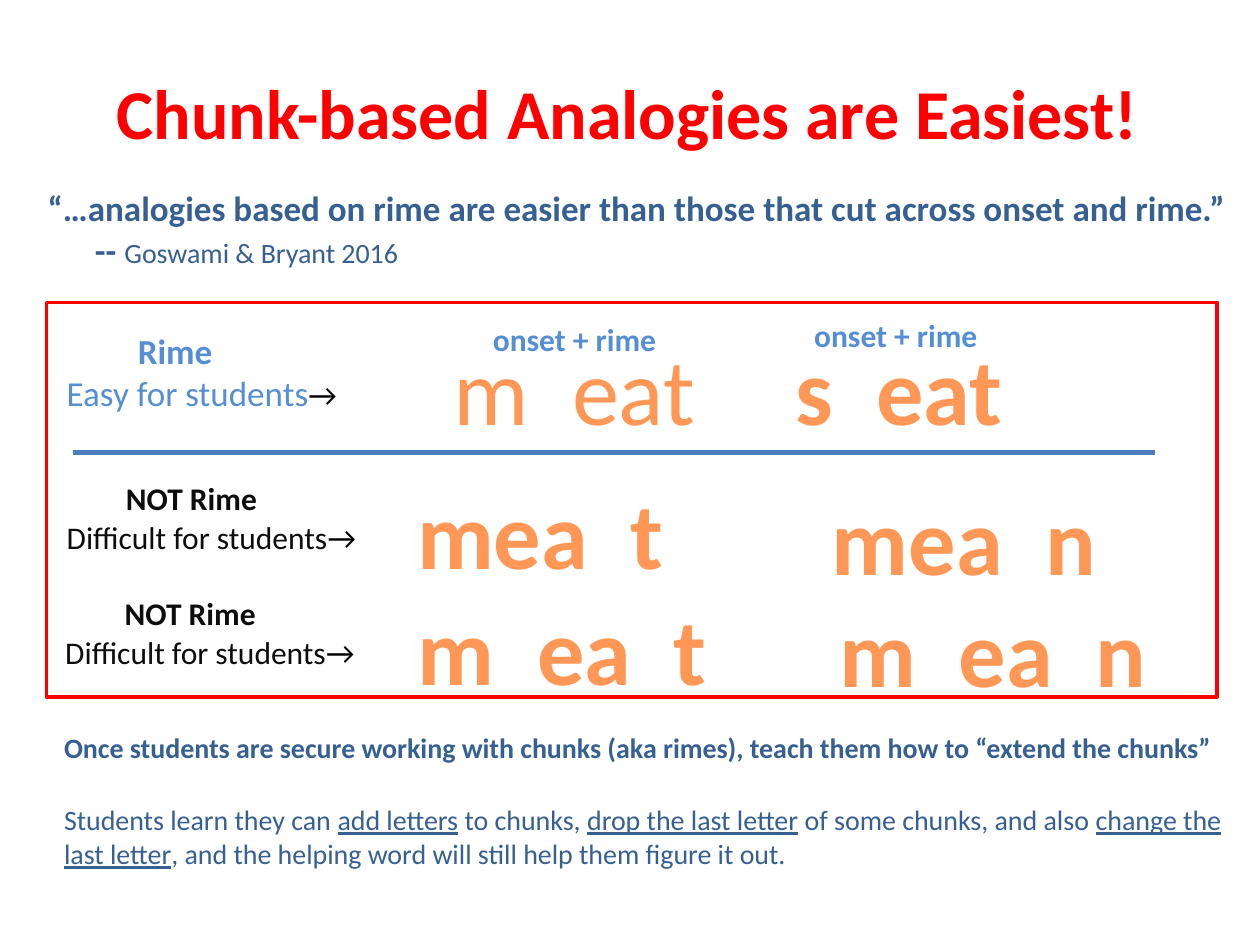
"""Build a slide on why chunk-based analogies are easiest for students."""
from lxml.etree import SubElement
from pptx import Presentation
from pptx.dml.color import RGBColor
from pptx.enum.shapes import MSO_CONNECTOR, MSO_SHAPE
from pptx.enum.text import MSO_AUTO_SIZE, PP_ALIGN
from pptx.oxml.ns import qn
from pptx.util import Pt

RED = RGBColor(0xFF, 0x00, 0x00)
NAVY = RGBColor(0x37, 0x60, 0x92)
SKY = RGBColor(0x55, 0x8E, 0xD5)
RULE_BLUE = RGBColor(0x4B, 0x7E, 0xBC)
ORANGE = RGBColor(0xFF, 0x98, 0x56)
INK = RGBColor(0x0D, 0x0D, 0x0D)
BLACK = RGBColor(0x00, 0x00, 0x00)


class SlideBuilder:
    """Holds the font and the current slide, and adds elements to it."""

    def __init__(self, slide, font_name="Calibri"):
        self.slide = slide
        self.font_name = font_name

    def format_run(self, run, size, color, bold=False, underline=False):
        font = run.font
        font.name = self.font_name
        font.size = Pt(size)
        font.bold = bold
        font.underline = underline
        font.color.rgb = color

    def text_frame(self, left, top, width, height, wrap=True):
        box = self.slide.shapes.add_textbox(Pt(left), Pt(top), Pt(width), Pt(height))
        frame = box.text_frame
        frame.word_wrap = wrap
        frame.auto_size = MSO_AUTO_SIZE.SHAPE_TO_FIT_TEXT
        return frame

    def centered(self, text, left, top, width, height, size, color, bold=True, wrap=True):
        frame = self.text_frame(left, top, width, height, wrap)
        frame.text = text
        paragraph = frame.paragraphs[0]
        paragraph.alignment = PP_ALIGN.CENTER
        self.format_run(paragraph.runs[0], size, color, bold)

    def word(self, text, left, top, width, bold=True):
        self.centered(text, left, top, width, 72.7, 54, ORANGE, bold, wrap=False)

    def paragraphs(self, left, top, width, height, *run_lists):
        frame = self.text_frame(left, top, width, height)
        for index, runs in enumerate(run_lists):
            paragraph = frame.add_paragraph() if index else frame.paragraphs[0]
            for text, *style in runs:
                run = paragraph.add_run()
                run.text = text
                self.format_run(run, *style)
        return frame.paragraphs

    def outline(self, left, top, width, height, color, weight):
        shape = self.slide.shapes.add_shape(
            MSO_SHAPE.RECTANGLE, Pt(left), Pt(top), Pt(width), Pt(height))
        shape.shadow.inherit = False
        shape.fill.background()
        shape.line.color.rgb = color
        shape.line.width = Pt(weight)

    def rule(self, left, right, top, color, weight):
        line = self.slide.shapes.add_connector(
            MSO_CONNECTOR.STRAIGHT, Pt(left), Pt(top), Pt(right), Pt(top))
        line.line.color.rgb = color
        line.line.width = Pt(weight)
        SubElement(line._element.spPr, qn("a:effectLst"))


def main():
    presentation = Presentation()
    presentation.slide_width, presentation.slide_height = Pt(720), Pt(540)
    builder = SlideBuilder(presentation.slides.add_slide(presentation.slide_layouts[6]))

    builder.outline(26.6, 172.8, 669, 225.4, RED, 2)
    builder.centered("Chunk-based Analogies are Easiest!", 41.8, 36, 633, 55.4, 40, RED)
    quote = builder.paragraphs(
        20.2, 103, 696.2, 55.4,
        [("“…analogies based on rime are easier than those that cut across onset and rime.”",
          20, NAVY, True)],
        [("-- ", 20, NAVY, True), ("Goswami & Bryant 2016", 16, NAVY)])
    quote[1]._p.get_or_add_pPr().set("marL", str(Pt(27)))

    for text, left, top, width, bold in (
            ("m  eat", 240.5, 185.8, 175.7, False), ("s  eat", 437.8, 185.8, 152, True),
            ("mea  t", 221, 267.8, 175.7, True), ("mea  n", 455.8, 271.4, 190, True),
            ("m  ea  t", 218.2, 334, 206, True), ("m  ea  n", 457.2, 335.5, 220.3, True)):
        builder.word(text, left, top, width, bold)

    for left, top in ((259.2, 179.3), (442.8, 177.1)):
        builder.centered("onset + rime", left, top, 138.2, 29, 18, SKY)

    for heading, note, left, top, note_left, note_top, size, color in (
            ("Rime", "Easy for students", 31, 185, 31, 208.8, 20, SKY),
            ("NOT Rime", "Difficult for students", 40.3, 270, 31, 292.3, 18, INK),
            ("NOT Rime", "Difficult for students", 39.6, 335.9, 30.2, 358.2, 18, INK)):
        builder.centered(heading, left, top, 138.2, 30, size, color)
        builder.paragraphs(note_left, note_top, 190, 30,
                           [(note, size, color), ("→", 18, BLACK)])

    builder.rule(41.8, 660.2, 258.5, RULE_BLUE, 2.75)
    advice = builder.paragraphs(
        29.5, 414, 677.5, 87,
        [("Once students are secure working with chunks (aka rimes), "
          "teach them how to “extend the chunks”", 16, NAVY, True)],
        [(text, 16, NAVY, False, underline) for text, underline in (
            ("Students learn they can ", False), ("add letters", True),
            (" to chunks, ", False), ("drop the last letter", True),
            (" of some chunks, and also ", False), ("change the last letter", True),
            (", and the helping word will still help them figure it out.", False))])
    advice[1].space_before = Pt(22)

    presentation.save("out.pptx")


if __name__ == "__main__":
    main()
